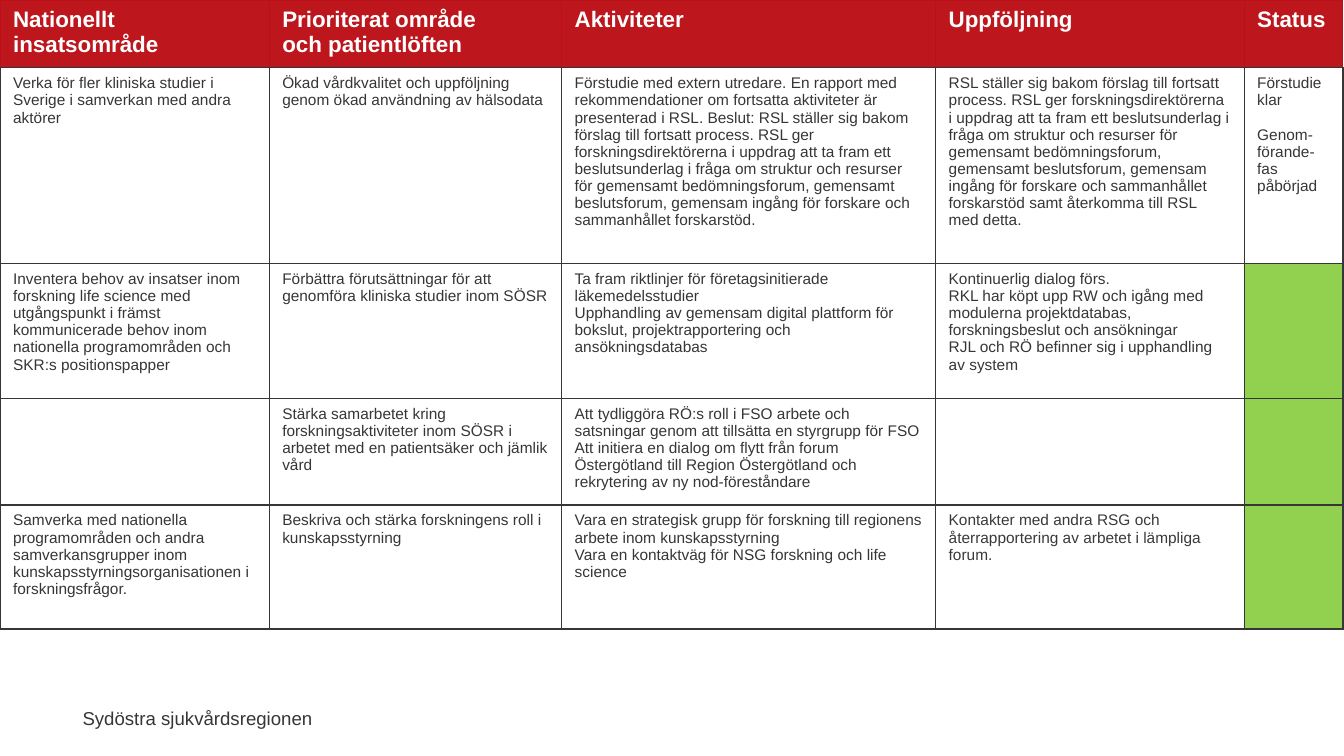
from lxml.etree import SubElement
from pptx import Presentation
from pptx.dml.color import RGBColor
from pptx.enum.text import MSO_ANCHOR, PP_ALIGN
from pptx.oxml.ns import qn
from pptx.util import Inches, Pt

RED, GREEN, WHITE, DARK, GREY = "BD161C", "92D050", "FFFFFF", "363636", "393939"
EDGE_RED = "BC1018"

HEADINGS = ["Nationellt insatsområde", "Prioriterat område\voch patientlöften",
            "Aktiviteter", "Uppföljning", "Status"]
EFFORTS = [
    ["Verka för fler kliniska studier i Sverige i samverkan med andra aktörer",
     "Ökad vårdkvalitet och uppföljning genom ökad användning av hälsodata",
     "Förstudie med extern utredare. En rapport med rekommendationer om fortsatta "
     "aktiviteter är presenterad i RSL. Beslut: RSL ställer sig bakom förslag till "
     "fortsatt process. RSL ger forskningsdirektörerna i uppdrag att ta fram ett "
     "beslutsunderlag i fråga om struktur och resurser för gemensamt bedömningsforum, "
     "gemensamt beslutsforum, gemensam ingång för forskare och sammanhållet forskarstöd.",
     "RSL ställer sig bakom förslag till fortsatt process. RSL ger "
     "forskningsdirektörerna i uppdrag att ta fram ett beslutsunderlag i fråga om "
     "struktur och resurser för gemensamt bedömningsforum, gemensamt beslutsforum, "
     "gemensam ingång för forskare och sammanhållet forskarstöd samt återkomma till "
     "RSL med detta.",
     "Förstudie klar\nGenom-förande-fas påbörjad"],
    ["Inventera behov av insatser inom forskning life science med utgångspunkt i främst "
     "kommunicerade behov inom nationella programområden och SKR:s positionspapper",
     "Förbättra förutsättningar för att genomföra kliniska studier inom SÖSR",
     "Ta fram riktlinjer för företagsinitierade läkemedelsstudier\n"
     "Upphandling av gemensam digital plattform för bokslut, projektrapportering och "
     "ansökningsdatabas",
     "Kontinuerlig dialog förs.\n"
     "RKL har köpt upp RW och igång med modulerna projektdatabas, forskningsbeslut och "
     "ansökningar\n"
     "RJL och RÖ befinner sig i upphandling av system",
     ""],
    ["",
     "Stärka samarbetet kring forskningsaktiviteter inom SÖSR i arbetet med en "
     "patientsäker och jämlik vård",
     "Att tydliggöra RÖ:s roll i FSO arbete och satsningar genom att tillsätta en "
     "styrgrupp för FSO\n"
     "Att initiera en dialog om flytt från forum Östergötland till Region Östergötland "
     "och rekrytering av ny nod-föreståndare",
     "",
     ""],
    ["Samverka med nationella programområden och andra samverkansgrupper inom "
     "kunskapsstyrningsorganisationen i forskningsfrågor.",
     "Beskriva och stärka forskningens roll i kunskapsstyrning",
     "Vara en strategisk grupp för forskning till regionens arbete inom kunskapsstyrning\n"
     "Vara en kontaktväg för NSG forskning och life science",
     "Kontakter med andra RSG och återrapportering av arbetet i lämpliga forum.",
     ""],
]
REGION = "Sydöstra sjukvårdsregionen"
COLUMN_WIDTHS = [2.67, 2.9, 3.71, 3.06, 0.98]
ROW_HEIGHTS = [0.67, 1.94, 1.34, 1.05, 1.23]


def color(hex_string):
    return RGBColor.from_string(hex_string)


def write(frame, text, size=11, fill=DARK, bold=False, align=PP_ALIGN.LEFT, gap=0):
    for index, line in enumerate(text.split("\n")):
        paragraph = frame.add_paragraph() if index else frame.paragraphs[0]
        paragraph.text = line
        paragraph.alignment = align
        if index and gap:
            paragraph.space_before = Pt(gap)
        for run in paragraph.runs:
            run.font.name = "Arial"
            run.font.size = Pt(size)
            run.font.bold = bold
            run.font.color.rgb = color(fill)


def draw_borders(cell, borders):
    properties = cell._tc.get_or_add_tcPr()
    for index, (side, (line_color, points)) in enumerate(borders.items()):
        line = SubElement(properties, qn(f"a:ln{side}"), w=str(Pt(points)))
        SubElement(SubElement(line, qn("a:solidFill")), qn("a:srgbClr"), val=line_color)
        properties.insert(index, line)


prs = Presentation()
prs.slide_width, prs.slide_height = Inches(13.33), Inches(7.5)
slide = prs.slides.add_slide(prs.slide_layouts[6])

footer = slide.shapes.add_textbox(Inches(0.7), Inches(6.96), Inches(2.5), Inches(0.33))
footer.text_frame.word_wrap = False
write(footer.text_frame, REGION, size=13.3, align=PP_ALIGN.RIGHT)

plan = slide.shapes.add_table(
    len(ROW_HEIGHTS), len(COLUMN_WIDTHS), 0, 0,
    Inches(sum(COLUMN_WIDTHS)), Inches(sum(ROW_HEIGHTS))).table
for column, width in zip(plan.columns, COLUMN_WIDTHS):
    column.width = Inches(width)
for row, height in zip(plan.rows, ROW_HEIGHTS):
    row.height = Inches(height)

for row, texts in enumerate([HEADINGS] + EFFORTS):
    for column, text in enumerate(texts):
        cell = plan.cell(row, column)
        cell.margin_left = cell.margin_right = Inches(0.13)
        cell.margin_top = cell.margin_bottom = Inches(0.07)
        cell.vertical_anchor = MSO_ANCHOR.TOP
        borders = dict.fromkeys("LRTB", (DARK, 1))
        if row == 0:
            borders.update(dict.fromkeys("LRT", (EDGE_RED, 0.75)))
            background = RED
            write(cell.text_frame, text, size=16, fill=WHITE, bold=True)
        else:
            is_status = column == len(HEADINGS) - 1
            background = GREEN if is_status and not text else WHITE
            ink = GREY if (row, column) == (4, 3) else DARK
            write(cell.text_frame, text, fill=ink, gap=12.5 if is_status else 0)
        cell.fill.solid()
        cell.fill.fore_color.rgb = color(background)
        draw_borders(cell, borders)

prs.save("out.pptx")
